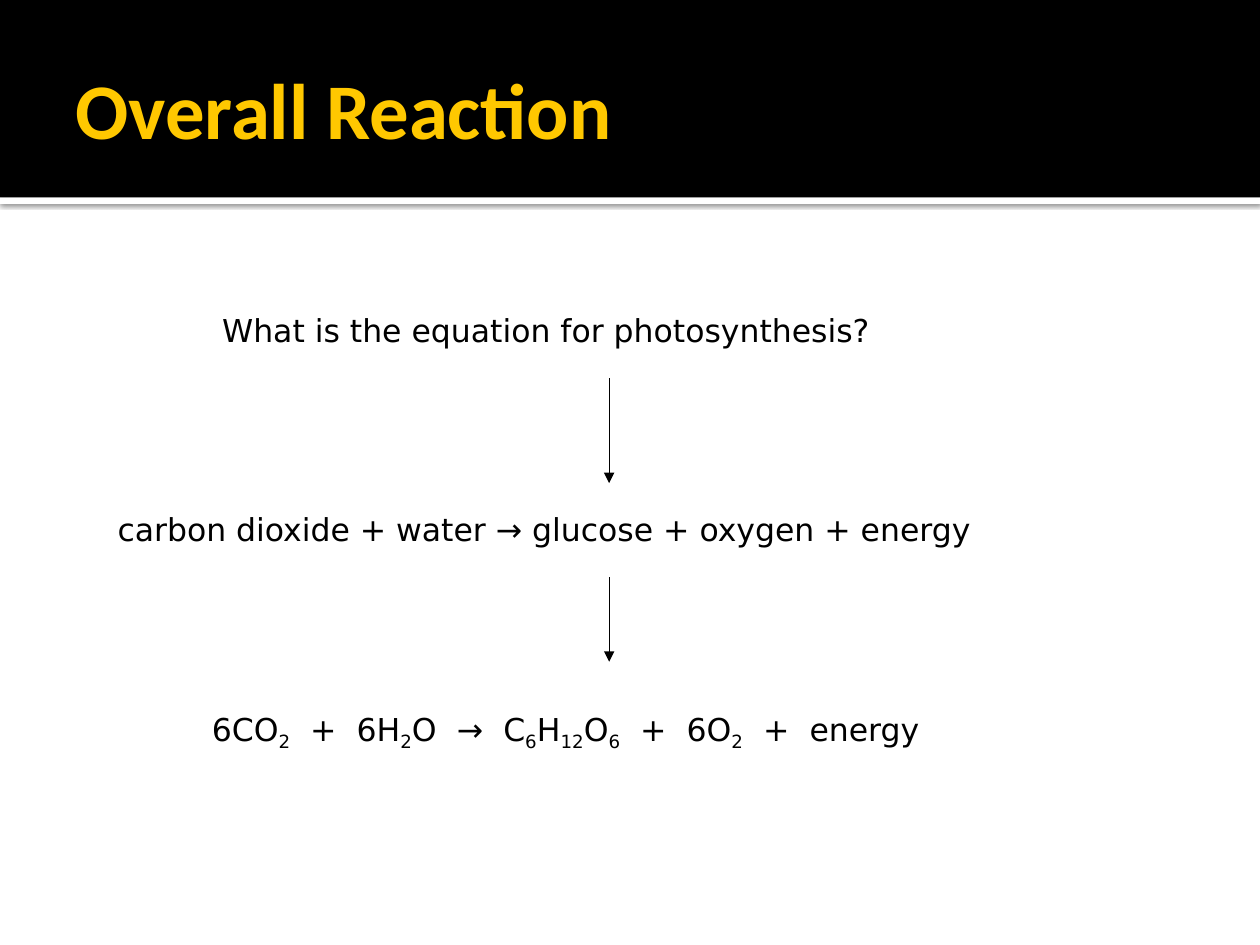
import pptx
import pptx.dml.color
import pptx.enum.shapes
import pptx.enum.text
import pptx.oxml
import pptx.oxml.ns
import pptx.util

Cm = pptx.util.Cm
Pt = pptx.util.Pt
COLOURS = {"black": "000000", "white": "FFFFFF", "gold": "FFC800"}
NAMESPACE = pptx.oxml.ns.nsdecls("a")
ANCHOR = pptx.enum.text.MSO_ANCHOR


def colour(name):
    return pptx.dml.color.RGBColor.from_string(COLOURS[name])


def add_span(para, text, font="DejaVu Sans", size=18, color="black",
             bold=False, baseline=None, spacing=None):
    """Add one formatted run; baseline is in percent, spacing in points."""
    span = para.add_run()
    span.text = text
    span.font.name = font
    span.font.size = Pt(size)
    span.font.bold = bold
    span.font.color.rgb = colour(color)
    properties = span.font._element
    if baseline is not None:
        properties.set("baseline", str(baseline * 1000))
    if spacing is not None:
        properties.set("spc", str(round(spacing * 100)))


class SlideBuilder:
    subscript = -25
    word_gap = 5.72  # extra points after each space of the formula

    def __init__(self, slide):
        self.slide = slide

    def band(self, top, height, fill, shadow=False):
        shape = self.slide.shapes.add_shape(
            pptx.enum.shapes.MSO_SHAPE.RECTANGLE, 0, Cm(top), Cm(25.4), Cm(height))
        shape.shadow.inherit = False
        shape.fill.solid()
        shape.fill.fore_color.rgb = colour(fill)
        shape.line.fill.background()
        if shadow:
            effects = shape._element.spPr.find(pptx.oxml.ns.qn("a:effectLst"))
            effects.append(pptx.oxml.parse_xml(
                f'<a:outerShdw {NAMESPACE} blurRad="{Pt(2.5)}" dist="{Pt(0.8)}" '
                f'dir="5400000" algn="tl" rotWithShape="0">'
                f'<a:srgbClr val="{COLOURS["black"]}"><a:alpha val="60000"/>'
                '</a:srgbClr></a:outerShdw>'))

    def text_box(self, left, top, width, height, anchor=ANCHOR.TOP):
        box = self.slide.shapes.add_textbox(Cm(left), Cm(top), Cm(width), Cm(height))
        box.text_frame.word_wrap = True
        box.text_frame.vertical_anchor = anchor
        return box.text_frame.paragraphs[0]

    def text(self, text, left, top, width, height, anchor=ANCHOR.TOP, **style):
        add_span(self.text_box(left, top, width, height, anchor), text, **style)

    def formula(self, text, left, top, width, height):
        """Underscores enclose subscripts; spaces are widened."""
        para = self.text_box(left, top, width, height)
        for index, part in enumerate(text.split("_")):
            if index % 2:
                add_span(para, part, baseline=self.subscript)
                continue
            for position, word in enumerate(part.split(" ")):
                if position:
                    add_span(para, " ", spacing=self.word_gap)
                if word:
                    add_span(para, word)

    def arrow(self, x, top, bottom):
        arrow = self.slide.shapes.add_connector(
            pptx.enum.shapes.MSO_CONNECTOR.STRAIGHT, Cm(x), Cm(top), Cm(x), Cm(bottom))
        arrow.line.color.rgb = colour("black")
        arrow.line.width = Pt(0.75)
        arrow.line._get_or_add_ln().append(
            pptx.oxml.parse_xml(f'<a:tailEnd {NAMESPACE} type="triangle"/>'))
        arrow._element.spPr.append(pptx.oxml.parse_xml(f"<a:effectLst {NAMESPACE}/>"))


def main():
    deck = pptx.Presentation()
    deck.slide_width, deck.slide_height = Cm(25.4), Cm(19.05)
    page = SlideBuilder(deck.slides.add_slide(deck.slide_layouts[6]))

    # Header with title
    page.band(3.98, 0.13, "white", shadow=True)
    page.band(0, 3.98, "black")
    page.text("Overall Reaction", 1.27, 0.43, 22.86, 3.48, anchor=ANCHOR.MIDDLE,
              font="Calibri", size=45, color="gold", bold=True)

    # Question, word equation and chemical formula
    page.text("What is the equation for photosynthesis?", 4.23, 6.14, 19.05, 1.27)
    page.text("carbon dioxide + water → glucose + oxygen + energy",
              2.12, 10.16, 21.17, 1.27)
    page.formula("6CO_2_ + 6H_2_O → C_6_H_12_O_6_ + 6O_2_ + energy",
                 4.02, 14.18, 19.9, 1.27)

    # Arrows between the steps
    for top, bottom in ((7.62, 9.74), (11.64, 13.34)):
        page.arrow(12.28, top, bottom)

    deck.save("out.pptx")


if __name__ == "__main__":
    main()
